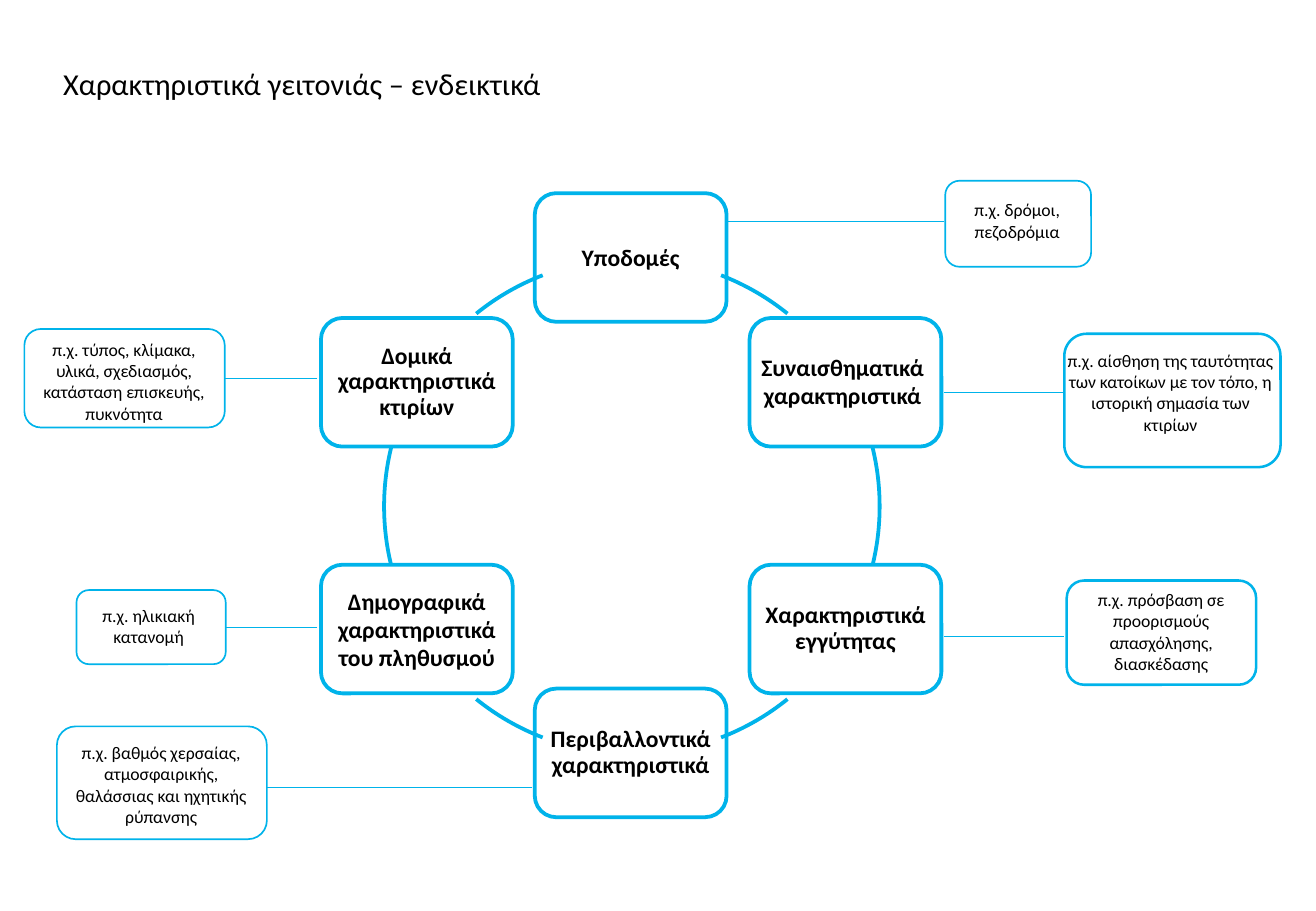
from dataclasses import dataclass
from typing import NamedTuple, Optional

from lxml.etree import SubElement
from pptx import Presentation
from pptx.dml.color import RGBColor
from pptx.enum.shapes import MSO_CONNECTOR as Connector, MSO_SHAPE as Preset
from pptx.enum.text import MSO_ANCHOR as Anchor, MSO_AUTO_SIZE as AutoSize, PP_ALIGN as Align
from pptx.oxml.ns import qn
from pptx.shapes.autoshape import Shape
from pptx.slide import Slide
from pptx.util import Cm, Length, Pt


@dataclass(frozen=True)
class Theme:
    font: str = "Calibri"
    ink: RGBColor = RGBColor(0x00, 0x00, 0x00)
    accent: RGBColor = RGBColor(0x00, 0xB3, 0xEA)
    title_size: Length = Pt(18)
    node_size: Length = Pt(14)
    note_size: Length = Pt(10.5)
    node_line: float = 2.25
    leader_line: float = 0.5


class Frame(NamedTuple):
    """A rectangle in centimetres."""
    left: float
    top: float
    width: float
    height: float

    def lengths(self) -> tuple[Length, ...]:
        return tuple(Cm(value) for value in self)


@dataclass(frozen=True)
class Node:
    text: str
    left: float
    top: float
    spacing: Optional[float] = None
    label: Optional[Frame] = None


@dataclass(frozen=True)
class Note:
    text: str
    outline: Frame
    label: Frame
    line_width: float
    leader_y: float
    leader_from: float
    leader_to: float


THEME = Theme()
NODE_WIDTH, NODE_HEIGHT = 4.01, 2.69
LABEL_MARGIN = 0.14
LABEL_INSET = 0.15
LEFT, MIDDLE, RIGHT = 6.71, 11.18, 15.67
RING = Frame(8.03, 5.41, 10.36, 10.36)
ARC_CENTRES = range(0, 360, 60)
SIDE_ARC_HALF, SLANTED_ARC_HALF = 13.7, 8.9

NODES = [
    Node("Υποδομές", MIDDLE, 4.04),
    Node("Συναισθηματικά χαρακτηριστικά", RIGHT, 6.65, label=Frame(15.52, 7.24, 4.19, 1.45)),
    Node("Χαρακτηριστικά εγγύτητας", RIGHT, 11.81, 0.9),
    Node("Περιβαλλοντικά χαρακτηριστικά", MIDDLE, 14.4, 0.9),
    Node("Δημογραφικά χαρακτηριστικά του πληθυσμού", LEFT, 11.81),
    Node("Δομικά χαρακτηριστικά κτιρίων", LEFT, 6.65, 0.9),
]

NOTES = [
    Note("π.χ. δρόμοι, πεζοδρόμια",
         Frame(19.76, 3.78, 3.05, 1.8), Frame(19.74, 4.04, 3.05, 1.19), 1, 4.62, 15.21, 19.74),
    Note("π.χ. αίσθηση της ταυτότητας των κατοίκων με τον τόπο, η ιστορική σημασία των κτιρίων",
         Frame(22.25, 6.98, 4.52, 2.79), Frame(22.06, 7.19, 4.82, 2.06), 1.5, 8.2, 19.74, 22.25),
    Note("π.χ. πρόσβαση σε προορισμούς απασχόλησης,\nδιασκέδασης",
         Frame(22.3, 12.14, 3.96, 2.18), Frame(22.33, 12.19, 3.89, 2.08), 1.5, 13.31, 19.74, 22.25),
    Note("π.χ. τύπος, κλίμακα, υλικά, σχεδιασμός, κατάσταση επισκευής, πυκνότητα",
         Frame(0.51, 6.88, 4.19, 2.06), Frame(0.36, 6.96, 4.47, 2.06), 1, 7.92, 6.63, 4.7),
    Note("π.χ. ηλικιακή κατανομή",
         Frame(1.6, 12.34, 3.12, 1.55), Frame(1.55, 12.52, 3.12, 1.19), 1, 13.11, 6.63, 4.7),
    Note("π.χ. βαθμός χερσαίας, ατμοσφαιρικής, θαλάσσιας και ηχητικής ρύπανσης",
         Frame(1.19, 15.19, 4.39, 2.36), Frame(1.07, 15.39, 4.6, 2.06), 1, 16.46, 11.13, 5.59),
]


def add_outline(slide: Slide, preset: Preset, frame: Frame, line_width: float) -> Shape:
    """Add an unfilled preset shape with an accent line."""
    shape = slide.shapes.add_shape(preset, *frame.lengths())
    shape.shadow.inherit = False
    shape.fill.background()
    shape.line.color.rgb = THEME.accent
    shape.line.width = Pt(line_width)
    return shape


def add_text(slide: Slide, text: str, frame: Frame, size: Length, align: Align = Align.CENTER,
             bold: bool = False, spacing: Optional[float] = None) -> Shape:
    box = slide.shapes.add_textbox(*frame.lengths())
    box.text_frame.word_wrap = True
    box.text_frame.text = text
    for para in box.text_frame.paragraphs:
        para.alignment = align
        para.line_spacing = spacing
        for span in para.runs:
            span.font.name = THEME.font
            span.font.size = size
            span.font.bold = bold
            span.font.color.rgb = THEME.ink
    return box


def add_ring(slide: Slide) -> None:
    """Draw the six arcs that join neighbouring nodes."""
    for centre in ARC_CENTRES:
        half = SIDE_ARC_HALF if centre % 180 == 0 else SLANTED_ARC_HALF
        arc = add_outline(slide, Preset.ARC, RING, THEME.node_line)
        for index, angle in enumerate((centre - half, centre + half)):
            # One degree is 60000 file units; adjustments count in 100000.
            arc.adjustments[index] = angle % 360 * 0.6


def add_node(slide: Slide, node: Node) -> None:
    outline = Frame(node.left, node.top, NODE_WIDTH, NODE_HEIGHT)
    add_outline(slide, Preset.ROUNDED_RECTANGLE, outline, THEME.node_line)
    label = node.label or Frame(node.left + LABEL_MARGIN, node.top + LABEL_MARGIN,
                                NODE_WIDTH - 2 * LABEL_MARGIN, NODE_HEIGHT - 2 * LABEL_MARGIN)
    box = add_text(slide, node.text, label, THEME.node_size, bold=True, spacing=node.spacing)
    text_frame = box.text_frame
    text_frame.vertical_anchor = Anchor.MIDDLE
    text_frame.margin_left = text_frame.margin_right = Cm(LABEL_INSET)
    text_frame.margin_top = text_frame.margin_bottom = Cm(LABEL_INSET)


def add_note(slide: Slide, note: Note) -> None:
    """Add an example box and the line that leads to it."""
    height = Cm(note.leader_y)
    leader = slide.shapes.add_connector(
        Connector.STRAIGHT, Cm(note.leader_from), height, Cm(note.leader_to), height)
    leader.line.color.rgb = THEME.accent
    leader.line.width = Pt(THEME.leader_line)
    SubElement(leader._element.spPr, qn("a:effectLst"))
    add_outline(slide, Preset.ROUNDED_RECTANGLE, note.outline, note.line_width)
    box = add_text(slide, note.text, note.label, THEME.note_size)
    box.text_frame.auto_size = AutoSize.SHAPE_TO_FIT_TEXT


def main() -> None:
    deck = Presentation()
    deck.slide_width, deck.slide_height = Cm(27.51), Cm(19.05)
    page = deck.slides.add_slide(deck.slide_layouts[6])
    title = add_text(page, "Χαρακτηριστικά γειτονιάς – ενδεικτικά",
                     Frame(1.07, 1.24, 11.79, 1.02), THEME.title_size, Align.LEFT)
    title.text_frame.auto_size = AutoSize.SHAPE_TO_FIT_TEXT
    add_ring(page)
    for node in NODES:
        add_node(page, node)
    for note in NOTES:
        add_note(page, note)
    deck.save("out.pptx")


if __name__ == "__main__":
    main()
